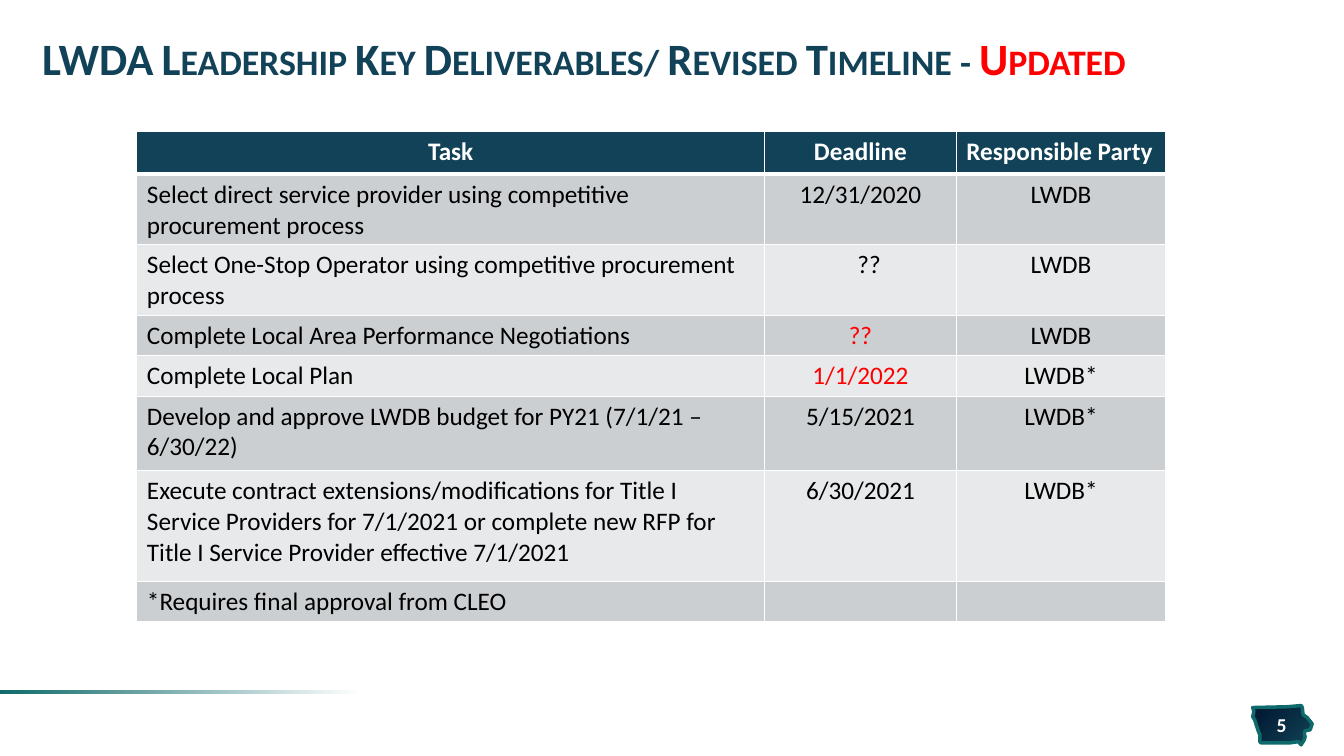
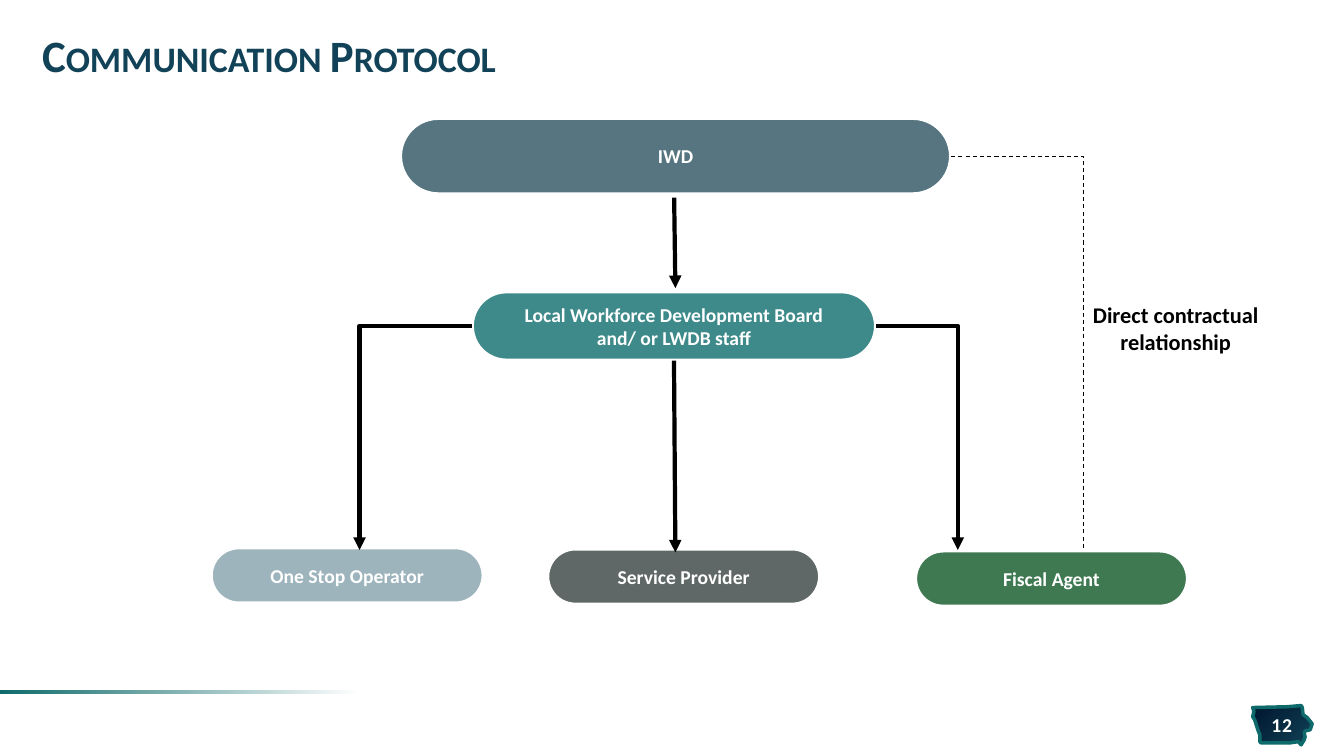
from dataclasses import dataclass
from typing import Optional

from lxml import etree
from pptx import Presentation
from pptx.dml.color import RGBColor
from pptx.enum.dml import MSO_LINE
from pptx.enum.shapes import MSO_CONNECTOR, MSO_SHAPE
from pptx.enum.text import MSO_ANCHOR, PP_ALIGN
from pptx.oxml.ns import qn
from pptx.util import Cm, Pt

# Enum members
ROUNDED, RECT = MSO_SHAPE.ROUNDED_RECTANGLE, MSO_SHAPE.RECTANGLE
STRAIGHT, ELBOW = MSO_CONNECTOR.STRAIGHT, MSO_CONNECTOR.ELBOW
DASH = MSO_LINE.DASH
MIDDLE, TOP = MSO_ANCHOR.MIDDLE, MSO_ANCHOR.TOP
LEFT, CENTER = PP_ALIGN.LEFT, PP_ALIGN.CENTER

# Shared look
FONT = "Calibri"
NAVY, NIGHT, TEAL = "114257", "00162E", "0F6A6B"
WHITE, BLACK, RED = "FFFFFF", "000000", "FF0000"
BANDS = ("CCCFD1", "E7E9EA")
INSETS = (0.25, 0.13, 0.25, 0.13)
NO_INSETS = (0, 0, 0, 0)
BADGE_OUTLINE = [
    (32.79, 17.78), (32.44, 17.81), (31.57, 17.83), (31.6, 17.93),
    (31.57, 18.06), (31.62, 18.14), (31.7, 18.39), (31.75, 18.52),
    (31.75, 18.69), (31.78, 18.72), (32.51, 18.72), (32.72, 18.69),
    (32.79, 18.77), (32.87, 18.64), (32.89, 18.57), (32.87, 18.47),
    (32.89, 18.42), (33.02, 18.39), (33.07, 18.24), (32.94, 18.08),
    (32.84, 18.01), (32.82, 17.83),
]


@dataclass
class Run:
    text: str
    color: str = BLACK


@dataclass
class Pill:
    lines: list[str]
    box: tuple[float, float, float, float]
    fill: str


@dataclass
class Link:
    start: tuple[float, float]
    end: tuple[float, float]
    kind: int = STRAIGHT
    width: float = 3
    arrow: bool = True
    begin_pill: Optional[int] = None


@dataclass
class Task:
    name: str
    deadline: str = ""
    party: str = ""
    height: float = 0.94
    color: str = BLACK
    indent: float = 0


PILLS = [
    Pill(["IWD"], (10.08, 2.97, 13.89, 1.93), "567580"),
    Pill(["Local Workforce Development Board", "and/ or LWDB staff"],
         (11.89, 7.34, 10.19, 1.75), "3E8A8A"),
    Pill(["Fiscal Agent"], (23.06, 13.87, 6.88, 1.42), "3E7951"),
    Pill(["Service Provider"], (13.79, 13.82, 6.88, 1.42), "5F6866"),
    Pill(["One Stop Operator"], (5.31, 13.79, 6.88, 1.42), "9DB4BC"),
]
LINKS = [
    Link((16.99, 4.98), (17.02, 7.26)),
    Link((23.97, 3.94), (27.31, 13.87), ELBOW, 0.75, False),
    Link((22.08, 8.21), (24.14, 13.86), ELBOW),
    Link((11.89, 8.21), (9.06, 13.86), ELBOW),
    Link((16.99, 9.09), (17.02, 13.92), begin_pill=1),
]
HEADERS = [("Task", CENTER), ("Deadline", CENTER), ("Responsible Party", LEFT)]
COLUMNS = (15.82, 4.83, 5.28)
HEADER_HEIGHT = 1.09
TASKS = [
    Task("Select direct service provider using competitive procurement process",
         "12/31/2020", "LWDB", 1.63),
    Task("Select One-Stop Operator using competitive procurement process",
         "??", "LWDB", 1.63, indent=0.43),
    Task("Complete Local Area Performance Negotiations", "??", "LWDB", color=RED),
    Task("Complete Local Plan", "1/1/2022", "LWDB*", color=RED),
    Task("Develop and approve LWDB budget for PY21 (7/1/21 – 6/30/22)",
         "5/15/2021", "LWDB*", 1.88),
    Task("Execute contract extensions/modifications for Title I Service Providers "
         "for 7/1/2021 or complete new RFP for Title I Service Provider effective "
         "7/1/2021", "6/30/2021", "LWDB*", 2.79),
    Task("*Requires final approval from CLEO"),
]


def rgb(value: str) -> RGBColor:
    return RGBColor.from_string(value)


def set_all(target, values: dict) -> None:
    for name, value in values.items():
        setattr(target, name, value)


def paint(sp, color: str) -> None:
    sp.fill.solid()
    sp.fill.fore_color.rgb = rgb(color)


def paint_gradient(sp, stops: list, angle: float) -> None:
    sp.fill.gradient()
    sp.fill.gradient_angle = angle
    for stop, (position, color) in zip(sp.fill.gradient_stops, stops):
        stop.position = position
        stop.color.rgb = rgb(color)


def write(p, runs: list[Run], size: float, bold: bool = True, align=CENTER) -> None:
    p.alignment = align
    for run in runs:
        r = p.add_run()
        r.text = run.text
        set_all(r.font, {"name": FONT, "size": Pt(size), "bold": bold})
        r.font.color.rgb = rgb(run.color)


def set_frame(tf, insets=INSETS, anchor=MIDDLE) -> None:
    sides = ("margin_left", "margin_top", "margin_right", "margin_bottom")
    set_all(tf, {"word_wrap": True, "vertical_anchor": anchor})
    set_all(tf, dict(zip(sides, map(Cm, insets))))


def add_text(slide, box: tuple, runs: list[Run], size: float, align=CENTER,
             insets=INSETS, anchor=MIDDLE):
    tf = slide.shapes.add_textbox(*map(Cm, box)).text_frame
    set_frame(tf, insets, anchor)
    p = tf.paragraphs[0]
    write(p, runs, size, align=align)
    return p


def add_base(prs, title: list[Run], top: float, number: int):
    slide = prs.slides.add_slide(prs.slide_layouts[6])
    # State badge
    points = [(round(x * 100), round(y * 100)) for x, y in BADGE_OUTLINE]
    builder = slide.shapes.build_freeform(*points[0], scale=Cm(1) / 100)
    builder.add_line_segments(points[1:], close=True)
    badge = builder.convert_to_shape()
    badge.shadow.inherit = False
    paint_gradient(badge, [(0, NIGHT), (1, NAVY)], 315)
    badge.line.color.rgb = rgb(TEAL)
    badge.line.width = Pt(2.5)
    # Footer rule
    rule = slide.shapes.add_shape(RECT, *map(Cm, (0, 17.4, 9.65, 0.08)))
    rule.shadow.inherit = False
    rule.line.fill.background()
    paint_gradient(rule, [(0.06, WHITE), (1, TEAL)], 180)
    # Slide number
    p = add_text(slide, (31.65, 17.98, 1.3, 0.58), [Run(str(number), WHITE)], 14,
                 insets=(0, 0.13, 0, 0.13))
    p.runs[0].font._element.set("spc", "50")
    # Title
    p = add_text(slide, (0.81, top, 32.23, 1.9), title, 32, LEFT)
    p.line_spacing = 0.85
    for r in p.runs:
        r.font._element.set("cap", "small")
    return slide


def set_borders(cell, bottom: float) -> None:
    tc_pr = cell._tc.get_or_add_tcPr()
    for side, width in (("L", 1), ("R", 1), ("T", 1), ("B", bottom)):
        ln = etree.SubElement(tc_pr, qn(f"a:ln{side}"), w=str(Pt(width)))
        fill = etree.SubElement(ln, qn("a:solidFill"))
        etree.SubElement(fill, qn("a:srgbClr"), val=WHITE)


def fill_cell(cell, run: Run, align, fill: str, header: bool = False,
              indent: float = 0) -> None:
    set_borders(cell, 3 if header else 1)
    paint(cell, fill)
    p = cell.text_frame.paragraphs[0]
    if run.text:
        write(p, [run], 18, header, align)
    else:
        p.font.size = Pt(18)
    if indent:
        p._p.get_or_add_pPr().set("marL", str(Cm(indent)))


def add_task_table(slide) -> None:
    heights = [HEADER_HEIGHT] + [task.height for task in TASKS]
    box = (3.45, 3.3, sum(COLUMNS), sum(heights))
    table = slide.shapes.add_table(len(heights), len(COLUMNS), *map(Cm, box)).table
    for column, width in zip(table.columns, COLUMNS):
        column.width = Cm(width)
    for row, height in zip(table.rows, heights):
        row.height = Cm(height)
    for i, (text, align) in enumerate(HEADERS):
        fill_cell(table.cell(0, i), Run(text, WHITE), align, NAVY, header=True)
    for i, task in enumerate(TASKS):
        band = BANDS[i % 2]
        name, deadline, party = table.rows[i + 1].cells
        fill_cell(name, Run(task.name), LEFT, band)
        fill_cell(deadline, Run(task.deadline, task.color), CENTER, band,
                  indent=task.indent)
        fill_cell(party, Run(task.party), CENTER, band)


def add_pill(slide, pill: Pill):
    sp = slide.shapes.add_shape(ROUNDED, *map(Cm, pill.box))
    sp.adjustments[0] = 0.5
    sp.shadow.inherit = False
    paint(sp, pill.fill)
    sp.line.color.rgb = rgb(WHITE)
    sp.line.width = Pt(3)
    tf = sp.text_frame
    set_frame(tf, NO_INSETS)
    for i, line in enumerate(pill.lines):
        p = tf.add_paragraph() if i else tf.paragraphs[0]
        write(p, [Run(line, WHITE)], 14)
    return sp


def add_link(slide, link: Link, pills: list) -> None:
    c = slide.shapes.add_connector(link.kind, *map(Cm, link.start + link.end))
    if link.begin_pill is not None:
        c.begin_connect(pills[link.begin_pill], 2)
    c.line.color.rgb = rgb(BLACK)
    c.line.width = Pt(link.width)
    sp_pr = c._element.spPr
    if link.kind == ELBOW:
        # One-bend elbow; a leftward one is turned half round and flipped
        sp_pr.find(qn("a:prstGeom")).set("prst", "bentConnector2")
        xfrm = sp_pr.find(qn("a:xfrm"))
        if xfrm.attrib.pop("flipH", None):
            xfrm.set("rot", "10800000")
            xfrm.set("flipV", "1")
    if link.arrow:
        etree.SubElement(sp_pr.find(qn("a:ln")), qn("a:tailEnd"), type="triangle")
    else:
        c.line.dash_style = DASH
    etree.SubElement(sp_pr, qn("a:effectLst"))


def main() -> None:
    prs = Presentation()
    prs.slide_width, prs.slide_height = Cm(33.87), Cm(19.05)

    # Timeline
    title = [Run("LWDA Leadership Key Deliverables/ Revised Timeline - ", NAVY),
             Run("Updated", RED)]
    add_task_table(add_base(prs, title, 0.61, 5))

    # Communication chart
    slide = add_base(prs, [Run("Communication Protocol", NAVY)], 0.53, 12)
    pills = [add_pill(slide, pill) for pill in PILLS]
    for link in LINKS:
        add_link(slide, link, pills)
    add_text(slide, (27.28, 7.47, 4.7, 1.63),
             [Run("Direct contractual relationship")], 16, anchor=TOP)

    prs.save("out.pptx")


if __name__ == "__main__":
    main()
